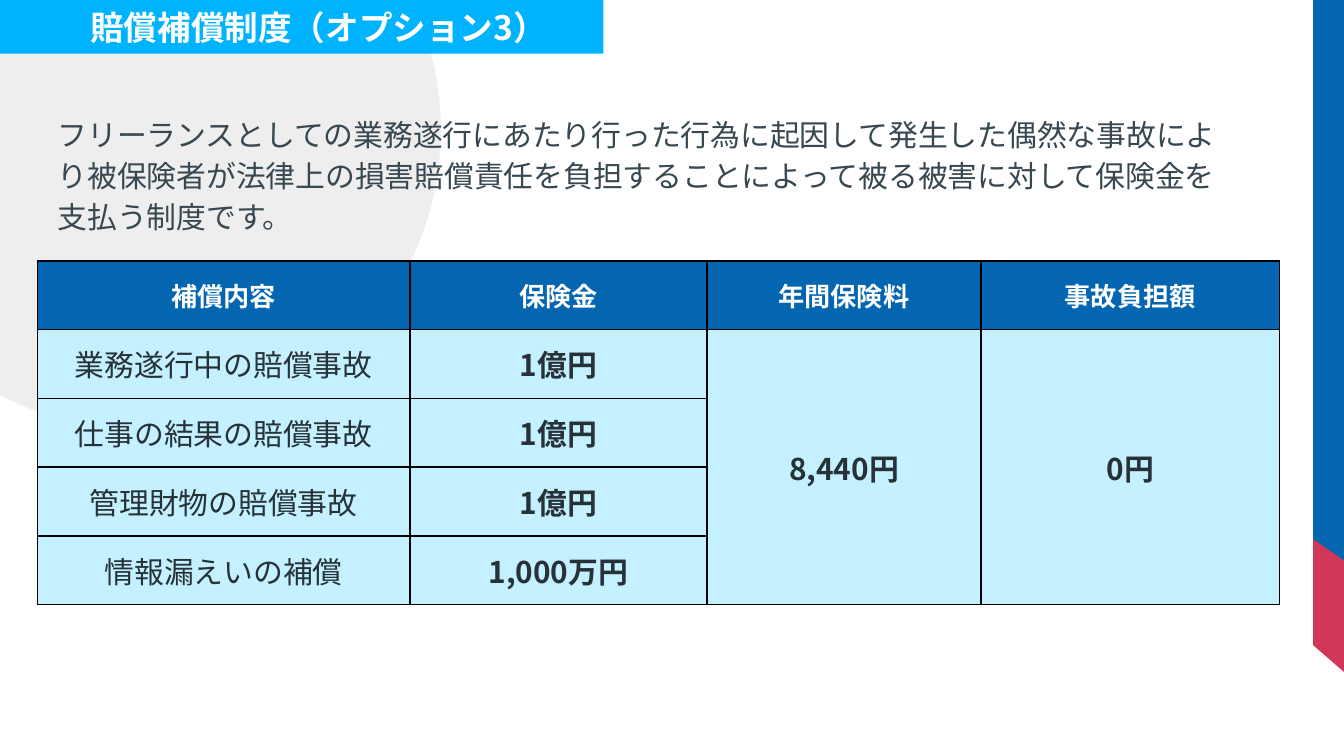
from math import acos, asin, cos, sin

from lxml import etree
from pptx import Presentation
from pptx.dml.color import RGBColor
from pptx.enum.lang import MSO_LANGUAGE_ID
from pptx.enum.text import MSO_ANCHOR, PP_ALIGN
from pptx.oxml.ns import qn
from pptx.util import Inches, Pt

LEFT, CENTER = PP_ALIGN.LEFT, PP_ALIGN.CENTER
MIDDLE = MSO_ANCHOR.MIDDLE
JAPANESE = MSO_LANGUAGE_ID.JAPANESE
FONT = "Noto Sans CJK JP"
BLUE, SKY, PALE, RED = "0465B1", "00B3FF", "C5F0FF", "D13658"
GREY, SLATE, DARK, WHITE, BLACK = "EEEEEE", "374851", "263238", "FFFFFF", "000000"

# Content
TITLE = "　賠償補償制度（オプション3）"
INTRO = (
    "フリーランスとしての業務遂行にあたり行った行為に起因して発生した偶然な事故により"
    "被保険者が法律上の損害賠償責任を負担することによって被る被害に対して"
    "保険金を支払う制度です。"
)
ROWS = [
    ("補償内容", "保険金", "年間保険料", "事故負担額"),
    ("業務遂行中の賠償事故", "1億円", "8,440円", "0円"),
    ("仕事の結果の賠償事故", "1億円"),
    ("管理財物の賠償事故", "1億円"),
    ("情報漏えいの補償", "1,000万円"),
]
COLS = [2.77, 2.21, 2.04, 2.22]
TABLE_H = 2.56
ROW_H = TABLE_H / len(ROWS)
STRIPES = [(RED, 4.8, 5), (BLUE, 4.01, 4.17)]  # colour, left end, right end
WIDE = 10
EDGE = 9.77
CX, CY, RADIUS = 1.05, 0.97, 2.23
STEPS = 90


def paint(fill, color):
    fill.solid()
    fill.fore_color.rgb = RGBColor.from_string(color)


def write(frame, text, size=16, color=DARK, bold=False, align=CENTER,
          line=None, after=0):
    para = frame.paragraphs[0]
    para.alignment = align
    para.space_before, para.space_after = Pt(0), Pt(after)
    if line:
        para.line_spacing = Pt(line)
    run = para.add_run()
    run.text = text
    font = run.font
    font.size, font.bold, font.name = Pt(size), bold, FONT
    font.language_id = JAPANESE
    font.color.rgb = RGBColor.from_string(color)
    asian = etree.SubElement(run._r.get_or_add_rPr(), qn("a:ea"))
    asian.set("typeface", FONT)


def outline(shapes, points, color):
    spots = [(Inches(x), Inches(y)) for x, y in points]
    pen = shapes.build_freeform(*spots[0])
    pen.add_line_segments(spots[1:], close=True)
    shape = pen.convert_to_shape()
    shape.shadow.inherit = False
    paint(shape.fill, color)
    shape.line.fill.background()


def border(cell):
    props = cell._tc.get_or_add_tcPr()
    for i, side in enumerate(("lnL", "lnR", "lnT", "lnB")):
        edge = etree.Element(qn("a:" + side), w=str(Pt(1)))
        fill = etree.SubElement(edge, qn("a:solidFill"))
        etree.SubElement(fill, qn("a:srgbClr"), val=BLACK)
        props.insert(i, edge)


# Slide in 16:9
deck = Presentation()
deck.slide_width, deck.slide_height = Inches(WIDE), Inches(WIDE * 9 / 16)
slide = deck.slides.add_slide(deck.slide_layouts[5])
shapes = slide.shapes

# Disc cut off by the top and left edges
start, end = asin(-CY / RADIUS), acos(-CX / RADIUS)
turns = [start + (end - start) * i / STEPS for i in range(STEPS + 1)]
arc = [(CX + RADIUS * cos(t), CY + RADIUS * sin(t)) for t in turns]
outline(shapes, [(0, 0)] + arc, GREY)

# Stripes on the right edge
for color, near, far in STRIPES:
    outline(shapes, [(EDGE, 0), (WIDE, 0), (WIDE, far), (EDGE, near)], color)

# Intro
box = shapes.add_textbox(Inches(0.33), Inches(0.73), Inches(8.99), Inches(1.05))
frame = box.text_frame
frame.word_wrap = True
frame.margin_left = frame.margin_right = Inches(0.1)
frame.margin_top = frame.margin_bottom = Inches(0.1)
write(frame, INTRO, color=SLATE, align=LEFT, line=22, after=16)

# Title band, brought in front of the disc
title = shapes.title
title.left, title.top = Inches(0), Inches(0)
title.width, title.height = Inches(4.49), Inches(0.4)
paint(title.fill, SKY)
title.text_frame.vertical_anchor = MIDDLE
write(title.text_frame, TITLE, size=18, color=WHITE, bold=True)
shapes._spTree.append(title._element)

# Table
table = shapes.add_table(len(ROWS), len(COLS), Inches(0.28), Inches(1.94),
                         Inches(sum(COLS)), Inches(TABLE_H)).table
for col, width in zip(table.columns, COLS):
    col.width = Inches(width)
for r, row in enumerate(ROWS):
    table.rows[r].height = Inches(ROW_H)
    head = r == 0
    for c in range(len(COLS)):
        cell = table.cell(r, c)
        paint(cell.fill, BLUE if head else PALE)
        border(cell)
        cell.vertical_anchor = MIDDLE
        cell.margin_left = cell.margin_right = Inches(0.09)
        cell.margin_top = cell.margin_bottom = 0
        if c < len(row):
            write(cell.text_frame, row[c], size=14 if head else 16,
                  color=WHITE if head else DARK, bold=head or c > 0)
for c in (2, 3):
    table.cell(1, c).merge(table.cell(len(ROWS) - 1, c))

deck.save("out.pptx")
